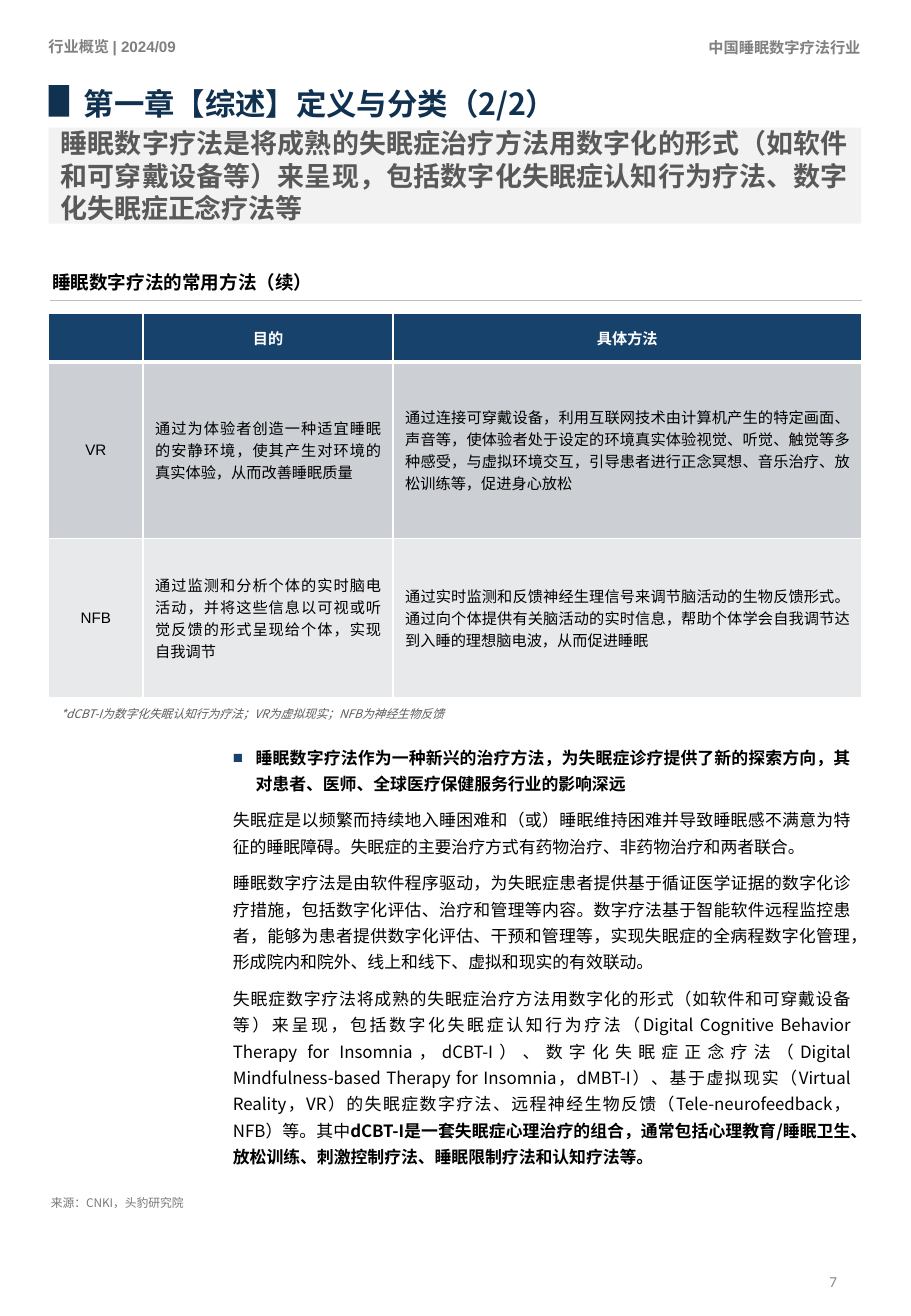
"""Build the report page on common methods of digital sleep therapy."""
from lxml.etree import SubElement
from pptx import Presentation
from pptx.dml.color import RGBColor
from pptx.enum.shapes import MSO_CONNECTOR, MSO_SHAPE
from pptx.enum.text import MSO_ANCHOR, MSO_AUTO_SIZE, PP_ALIGN
from pptx.oxml.ns import qn
from pptx.util import Pt

NOTO = "Noto Sans CJK SC"
NAVY, BLUE, GREY = "113150", "17426B", "808080"
LEFT, MID, RIGHT, FULL = PP_ALIGN.LEFT, PP_ALIGN.CENTER, PP_ALIGN.RIGHT, PP_ALIGN.JUSTIFY

ROWS = [
    ["", "目的", "具体方法"],
    ["VR", "通过为体验者创造一种适宜睡眠的安静环境，使其产生对环境的真实体验，从而改善睡眠质量",
     "通过连接可穿戴设备，利用互联网技术由计算机产生的特定画面、声音等，使体验者处于设定的环境真实体验视觉、"
     "听觉、触觉等多种感受，与虚拟环境交互，引导患者进行正念冥想、音乐治疗、放松训练等，促进身心放松"],
    ["NFB", "通过监测和分析个体的实时脑电活动，并将这些信息以可视或听觉反馈的形式呈现给个体，实现自我调节",
     "通过实时监测和反馈神经生理信号来调节脑活动的生物反馈形式。通过向个体提供有关脑活动的实时信息，"
     "帮助个体学会自我调节达到入睡的理想脑电波，从而促进睡眠"],
]
BODY = [
    [("睡眠数字疗法作为一种新兴的治疗方法，为失眠症诊疗提供了新的探索方向，其对患者、医师、"
      "全球医疗保健服务行业的影响深远", True)],
    [("失眠症是以频繁而持续地入睡困难和（或）睡眠维持困难并导致睡眠感不满意为特征的睡眠障碍。"
      "失眠症的主要治疗方式有药物治疗、非药物治疗和两者联合。", False)],
    [("睡眠数字疗法是由软件程序驱动，为失眠症患者提供基于循证医学证据的数字化诊疗措施，包括数字化评估、"
      "治疗和管理等内容。数字疗法基于智能软件远程监控患者，能够为患者提供数字化评估、干预和管理等，"
      "实现失眠症的全病程数字化管理，形成院内和院外、线上和线下、虚拟和现实的有效联动。", False)],
    [("失眠症数字疗法将成熟的失眠症治疗方法用数字化的形式（如软件和可穿戴设备等）来呈现，"
      "包括数字化失眠症认知行为疗法（Digital Cognitive Behavior Therapy for Insomnia，dCBT‑I）、"
      "数字化失眠症正念疗法（Digital Mindfulness‑based Therapy for Insomnia，dMBT‑I）、"
      "基于虚拟现实（Virtual Reality，VR）的失眠症数字疗法、"
      "远程神经生物反馈（Tele‑neurofeedback，NFB）等。其中", False),
     ("dCBT‑I是一套失眠症心理治疗的组合，通常包括心理教育/睡眠卫生、放松训练、刺激控制疗法、"
      "睡眠限制疗法和认知疗法等。", True)],
]


def tint(code):
    """Turn a hex string into a colour."""
    return RGBColor.from_string(code)


def put(item, vals):
    """Set each named value on an item."""
    for name, val in vals.items():
        setattr(item, name, val)


def write(para, text, size, color, face=NOTO, **look):
    """Add one styled run to a paragraph."""
    run = para.add_run()
    run.text = text
    put(run.font, {"size": Pt(size), "name": face, **look})
    run.font.color.rgb = tint(color)
    SubElement(run.font._element, qn("a:ea"), typeface=NOTO)


def box(slide, area, **frame):
    """Add an empty text box and return its text frame."""
    text = slide.shapes.add_textbox(*map(Pt, area)).text_frame
    put(text, {"word_wrap": True, "auto_size": MSO_AUTO_SIZE.SHAPE_TO_FIT_TEXT, **frame})
    return text


def label(slide, area, text, size, color, align=LEFT, gap=None, frame=None, **look):
    """Add a text box that holds one line of text."""
    para = box(slide, area, **(frame or {})).paragraphs[0]
    put(para, {"alignment": align, "line_spacing": gap})
    write(para, text, size, color, **look)


def block(slide, area, color):
    """Add a plain filled rectangle."""
    shape = slide.shapes.add_shape(MSO_SHAPE.RECTANGLE, *map(Pt, area))
    shape.shadow.inherit = False
    shape.fill.solid()
    shape.fill.fore_color.rgb = tint(color)
    shape.line.fill.background()
    return shape


def rule(slide, left, right, top):
    """Add a thin grey level line."""
    line = slide.shapes.add_connector(MSO_CONNECTOR.STRAIGHT, *map(Pt, (left, top, right, top)))
    line.line.width = Pt(0.5)
    line.line.color.rgb = tint("BFBFBF")
    SubElement(line._element.spPr, qn("a:effectLst"))


def edge(cell, side, width):
    """Draw one white border of a cell."""
    line = SubElement(cell._tc.get_or_add_tcPr(), qn("a:ln" + side), w=str(Pt(width)))
    SubElement(SubElement(line, qn("a:solidFill")), qn("a:srgbClr"), val="FFFFFF")


def grid(slide, left, top, wide, high):
    """Add the table of methods."""
    frame = slide.shapes.add_table(
        len(high), len(wide), Pt(left), Pt(top), Pt(sum(wide)), Pt(sum(high)))
    table = frame.table
    for col, size in zip(table.columns, wide):
        col.width = Pt(size)
    for row, size in zip(table.rows, high):
        row.height = Pt(size)
    for r, (texts, fill) in enumerate(zip(ROWS, (BLUE, "CCCFD4", "E8E9EB"))):
        for c, text in enumerate(texts):
            cell = table.cell(r, c)
            cell.vertical_anchor = MSO_ANCHOR.MIDDLE
            for side in "LRTB":
                thick = (r, side) in ((0, "B"), (1, "T"))
                edge(cell, side, 3 if thick else 1)
            cell.fill.solid()
            cell.fill.fore_color.rgb = tint(fill)
            if text:
                para = cell.text_frame.paragraphs[0]
                para.alignment = FULL if r and c else MID
                write(para, text, 9, "000000" if r else "FFFFFF", "Arial", bold=r == 0)


def bullet(para):
    """Give a paragraph a blue square bullet."""
    props = para._p.get_or_add_pPr()
    put_in = Pt(13.5)
    props.set("marL", str(put_in))
    props.set("indent", str(-put_in))
    SubElement(SubElement(props, qn("a:buClr")), qn("a:srgbClr"), val=BLUE)
    SubElement(props, qn("a:buFont"), typeface="Arial")
    SubElement(props, qn("a:buChar"), char="■")


def prose(slide, area):
    """Add the body text with its bulleted lead."""
    text = box(slide, area)
    for i, runs in enumerate(BODY):
        para = text.add_paragraph() if i else text.paragraphs[0]
        if i:
            para.space_before = Pt(6)
        else:
            bullet(para)
        put(para, {"alignment": FULL, "line_spacing": 1.3})
        for part, bold in runs:
            write(para, part, 10, "000000", bold=bold)


def lead(slide, area, text):
    """Add the grey panel with the key message."""
    frame = block(slide, area, "F2F2F2").text_frame
    put(frame, {"word_wrap": True, "vertical_anchor": MSO_ANCHOR.MIDDLE})
    para = frame.paragraphs[0]
    para.alignment = FULL
    write(para, text, 16, "595959", bold=True)


def main():
    """Build the page and save it."""
    deck = Presentation()
    put(deck, {"slide_width": Pt(540), "slide_height": Pt(779.8)})
    slide = deck.slides.add_slide(deck.slide_layouts[6])
    middle = {"vertical_anchor": MSO_ANCHOR.MIDDLE}
    label(slide, (381.6, 738.7, 121.7, 41), "7", 9, "898989", RIGHT, face="Calibri",
          frame={**middle, "auto_size": MSO_AUTO_SIZE.NONE})
    label(slide, (365.8, 19.4, 151.2, 18), "中国睡眠数字疗法行业", 9, GREY, RIGHT, bold=True)
    label(slide, (21.6, 18.7, 92.9, 18), "行业概览 | 2024/09", 9, GREY, face="Arial",
          frame={"word_wrap": False}, bold=True)
    label(slide, (30.2, 704.9, 255.6, 15.8), "来源：CNKI，头豹研究院", 7, "797979",
          frame={"margin_left": 0, "margin_right": 0})
    block(slide, (28.8, 50.4, 12.2, 18.7), NAVY)
    label(slide, (21.6, 43.2, 489.6, 31.7), "第一章【综述】定义与分类（2/2）", 18, NAVY,
          gap=1.2, frame={**middle, "margin_left": Pt(28)}, bold=True)
    lead(slide, (28.8, 75.6, 481.7, 56.9),
         "睡眠数字疗法是将成熟的失眠症治疗方法用数字化的形式（如软件和可穿戴设备等）来呈现，"
         "包括数字化失眠症认知行为疗法、数字化失眠症正念疗法等")
    rule(slide, 29.5, 511.2, 177.8)
    label(slide, (23.8, 157.7, 357.1, 20.2), "睡眠数字疗法的常用方法（续）", 11, "000000",
          FULL, Pt(12.6), bold=True)
    grid(slide, 28.8, 185.8, (56, 148.2, 277.7), (26, 104.4, 94.3))
    label(slide, (28.8, 415.4, 356.4, 15.8),
          "*dCBT‑I为数字化失眠认知行为疗法；VR为虚拟现实；NFB为神经生物反馈", 7, "5C5C5C",
          italic=True)
    prose(slide, (131, 435.6, 380.2, 260.6))
    deck.save("out.pptx")


if __name__ == "__main__":
    main()
